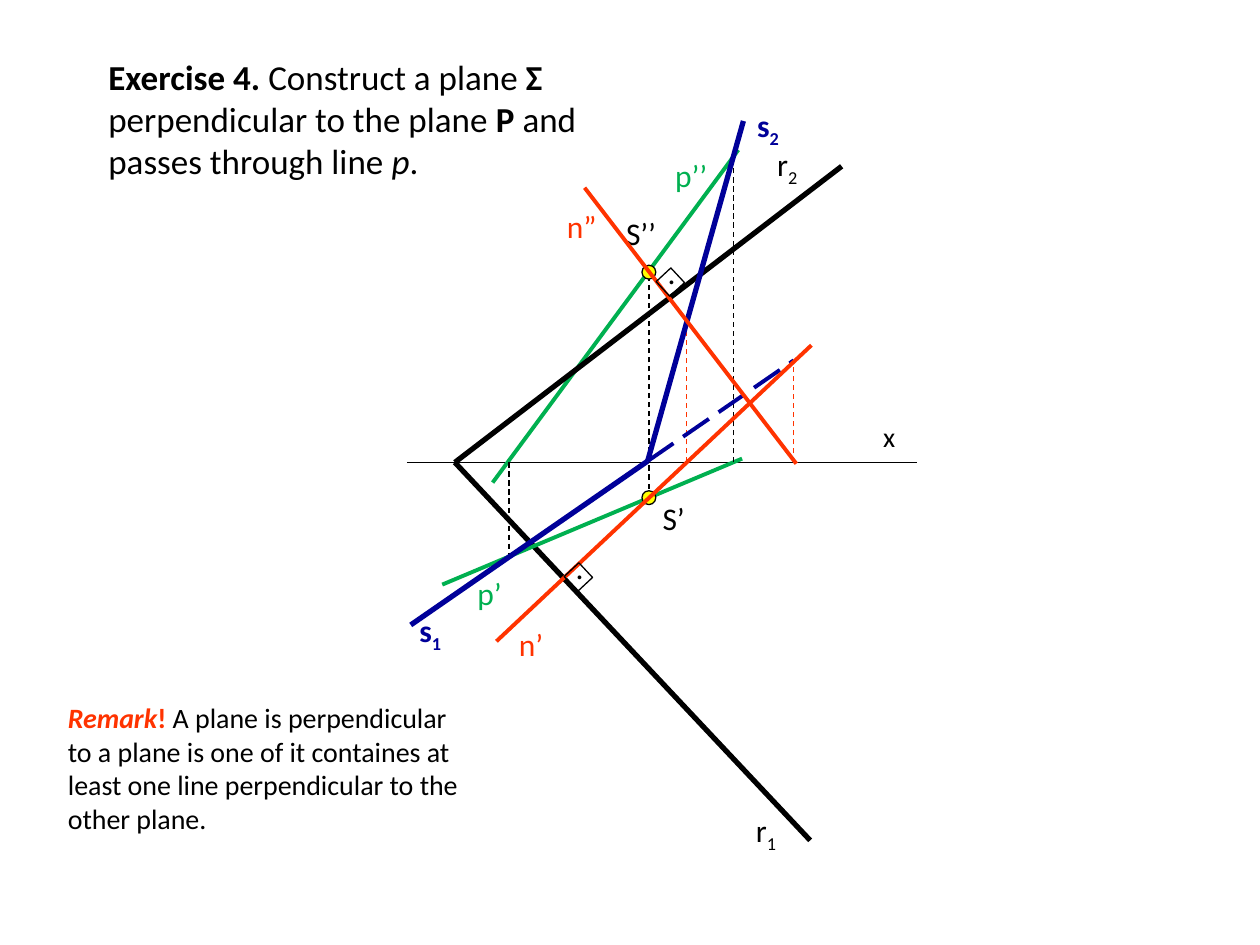
from lxml import etree
from pptx import Presentation
from pptx import util as u
from pptx.dml.color import RGBColor
from pptx.enum import dml, shapes, text
from pptx.oxml.ns import qn

BLACK, GREEN, RED, BLUE, YELLOW = "000000", "00B050", "FF3300", "000099", "FFFF00"
THIN, MEDIUM, THICK = 0.75, 2.25, 3
DASH, LONG_DASH = dml.MSO_LINE.DASH, dml.MSO_LINE.LONG_DASH
FONT = "Calibri"


def rgb(color):
    return RGBColor.from_string(color)


def place(sp, left, top, width, height):
    sp.left, sp.top = u.Inches(left), u.Inches(top)
    sp.width, sp.height = u.Inches(width), u.Inches(height)


def write(sp, runs, size):
    """Fill a shape with one paragraph; runs are (text, colour, styles)."""
    tf = sp.text_frame
    tf.word_wrap = True
    tf.auto_size = text.MSO_AUTO_SIZE.NONE
    tf.vertical_anchor = text.MSO_ANCHOR.TOP
    p = tf.paragraphs[0]
    p.alignment = text.PP_ALIGN.LEFT
    for words, color, styles in runs:
        r = p.add_run()
        r.text = words
        r.font.name, r.font.size = FONT, u.Pt(size)
        r.font.color.rgb = rgb(color)
        r.font.bold, r.font.italic = "b" in styles, "i" in styles
        if "sub" in styles:
            r.font._element.set("baseline", "-25000")


def add_text(s, box, runs, size=18):
    sp = s.shapes.add_textbox(0, 0, 0, 0)
    place(sp, *box)
    write(sp, runs, size)


def add_label(s, left, top, name, color=BLACK, index="", bold=False, size=18, width=0.58):
    weight = ["b"] if bold else []
    runs = [(name, color, weight)]
    if index:
        runs.append((index, color, weight + ["sub"]))
    add_text(s, (left, top, width, 0.4), runs, size)


def add_line(s, start, end, color=BLACK, width=THIN, dash=None):
    ends = [u.Inches(v) for v in (*start, *end)]
    line = s.shapes.add_connector(shapes.MSO_CONNECTOR.STRAIGHT, *ends)
    line.line.color.rgb = rgb(color)
    line.line.width = u.Pt(width)
    if dash:
        line.line.dash_style = dash
    etree.SubElement(line._element.spPr, qn("a:effectLst"))


def add_outlined(s, kind, center, size, fill=None):
    sp = s.shapes.add_shape(kind, 0, 0, 0, 0)
    x, y = center
    place(sp, x - size / 2, y - size / 2, size, size)
    sp.shadow.inherit = False
    sp.line.color.rgb = rgb(BLACK)
    sp.line.width = u.Pt(THIN)
    if fill:
        sp.fill.solid()
        sp.fill.fore_color.rgb = rgb(fill)
    else:
        sp.fill.background()
    return sp


def add_point(s, center):
    add_outlined(s, shapes.MSO_SHAPE.OVAL, center, 0.11, YELLOW)


def add_right_angle(s, center):
    x, y = center
    add_outlined(s, shapes.MSO_SHAPE.RECTANGLE, center, 0.16).rotation = 47
    add_label(s, x - 0.12, y - 0.28, ".", width=0.27)


def add_title(s):
    title = s.shapes.title
    place(title, 0.76, 0.39, 4.71, 1.11)
    write(title, [
        ("Exercise 4. ", BLACK, ["b"]),
        ("Construct a plane ", BLACK, []),
        ("Σ ", BLACK, ["b"]),
        ("perpendicular to the plane ", BLACK, []),
        ("P ", BLACK, ["b"]),
        ("and passes through line ", BLACK, []),
        ("p", BLACK, ["i"]),
        (".", BLACK, []),
    ], 20)


def add_remark(s):
    add_text(s, (0.44, 5.51, 3.42, 1.18), [
        ("Remark", RED, ["b", "i"]),
        ("!", RED, ["b"]),
        (" A plane is perpendicular to a plane is one of it containes at least "
         "one line perpendicular to the other plane.", BLACK, []),
    ], 16)


def draw_given(s):
    """Axis x, the traces of plane P and the projections of line p."""
    axis_y, vertex = 3.67, (3.61, 3.67)
    add_line(s, (3.23, axis_y), (7.28, axis_y))
    add_label(s, 6.91, 3.28, "x", size=16, width=0.29)
    add_line(s, (5.86, 1.19), (3.91, 3.83), GREEN, MEDIUM)
    add_line(s, (6.68, 1.32), vertex, BLACK, THICK)
    add_line(s, vertex, (6.43, 6.67), BLACK, THICK)
    add_label(s, 5.9, 6.39, "r", index="1")
    add_label(s, 6.07, 1.1, "r", index="2")
    add_line(s, (5.89, 3.64), (3.51, 4.64), GREEN, MEDIUM)
    for x, y in ((4.04, 4.42), (5.82, 1.25)):
        add_line(s, (x, axis_y), (x, y), dash=DASH)
    add_label(s, 3.69, 4.51, "p’", GREEN)
    add_label(s, 5.26, 1.19, "p’’", GREEN)


def draw_point_s(s):
    x, upper, lower = 5.15, 2.16, 3.95
    add_line(s, (x, lower), (x, upper), dash=DASH)
    for y in (upper, lower):
        add_point(s, (x, y))
    add_label(s, 5.16, 3.91, "S’")
    add_label(s, 4.87, 1.65, "S’’")


def draw_solution(s):
    """Traces of plane Σ and the normal n."""
    vertex, trace_point = (5.14, 3.66), (6.3, 2.86)
    for x, y in (trace_point, (5.45, 2.54)):
        add_line(s, (x, 3.67), (x, y), RED, dash=DASH)
    add_line(s, (5.9, 0.96), vertex, BLUE, THICK)
    add_label(s, 5.91, 0.79, "s", BLUE, "2", bold=True)
    add_line(s, vertex, trace_point, BLUE, MEDIUM, LONG_DASH)
    add_label(s, 3.23, 4.8, "s", BLUE, "1", bold=True)
    add_line(s, vertex, (3.26, 4.96), BLUE, THICK)
    add_line(s, (3.94, 5.09), (6.44, 2.74), RED, MEDIUM)
    add_label(s, 4.02, 4.91, "n’", RED)
    add_right_angle(s, (4.59, 4.58))
    add_line(s, (4.64, 1.49), (6.32, 3.68), RED, MEDIUM)
    add_label(s, 4.4, 1.59, "n”", RED)
    add_right_angle(s, (5.32, 2.24))


def main():
    prs = Presentation()
    prs.slide_width, prs.slide_height = u.Inches(10), u.Inches(7.5)
    s = prs.slides.add_slide(prs.slide_layouts[5])
    add_title(s)
    draw_given(s)
    draw_point_s(s)
    add_remark(s)
    draw_solution(s)
    prs.save("out.pptx")


if __name__ == "__main__":
    main()
